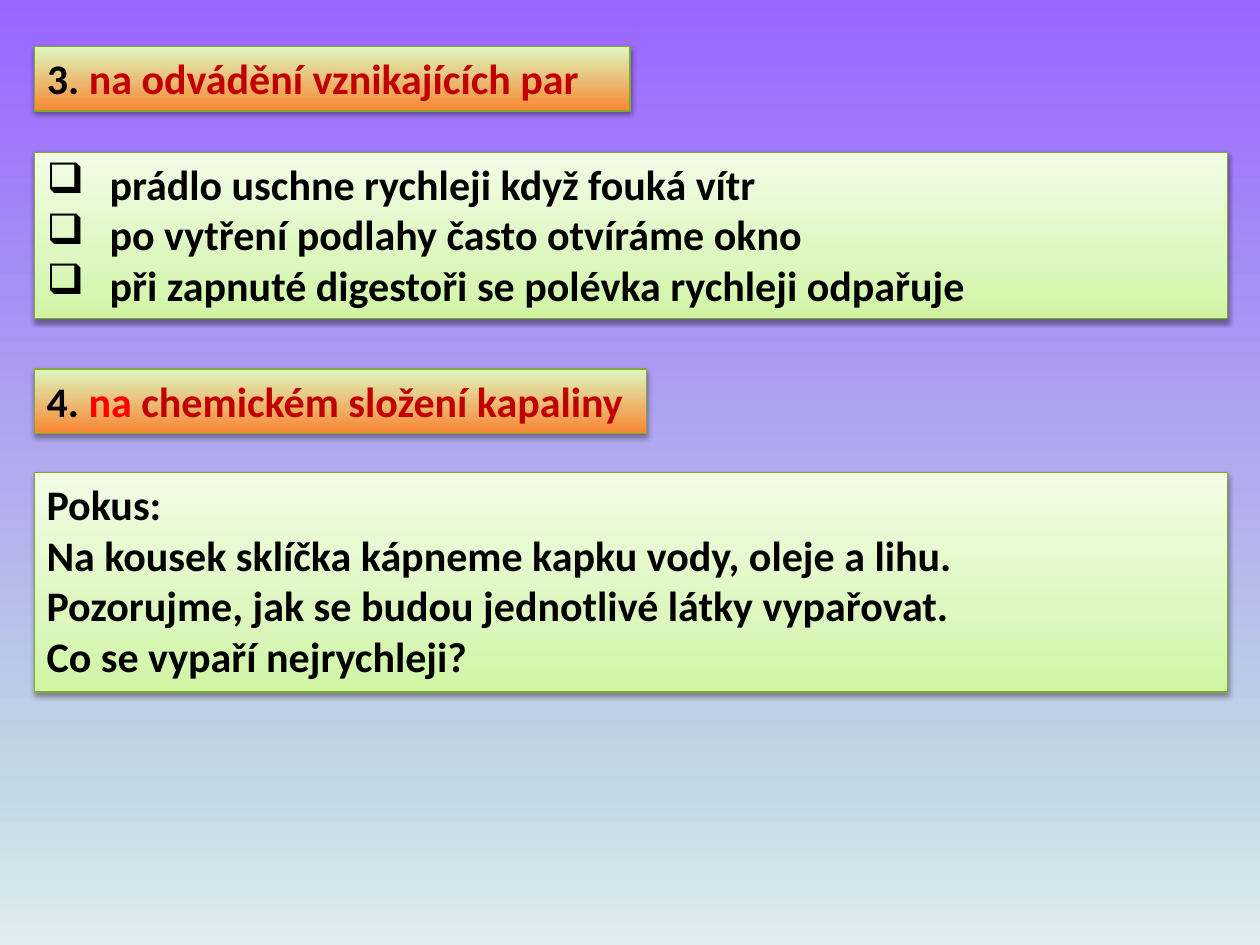
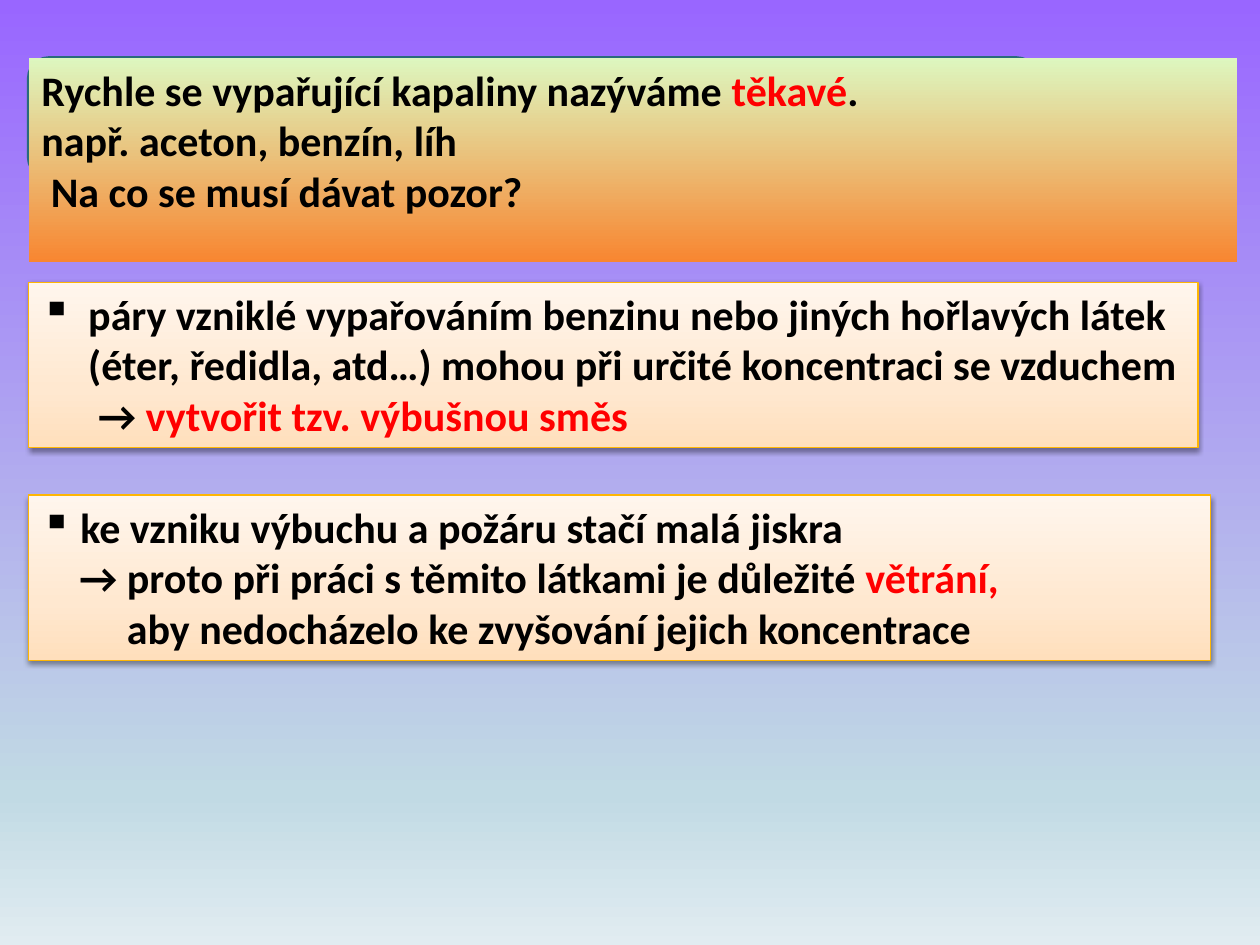
"""Build two slides about what the evaporation of liquids depends on."""
import dataclasses

import pptx
import pptx.dml.color
import pptx.enum.shapes
import pptx.enum.text
import pptx.oxml
import pptx.oxml.ns
import pptx.util
from lxml import etree

Cm, Pt = pptx.util.Cm, pptx.util.Pt
RGB = pptx.dml.color.RGBColor
SHAPE = pptx.enum.shapes.MSO_SHAPE
qn = pptx.oxml.ns.qn

HUES = {
    "black": "000000", "red": "FF0000", "dark": "C00000",
    "teal": "3891A7", "navy": "296B7C", "leaf": "82A92F", "gold": "FEB604",
}
SKY = ((0, "9966FF"), (84, "C1DAE4"), (100, "E1ECF1"))
GREEN = ((0, "D0F5A3"), (35, "DDF7BF"), (100, "F2FDE6"))
FLAME = ((0, "F88631"), (100, "DDF7BF"))
PEACH = ((0, "FFDFBC"), (35, "FFE8D0"), (100, "FFF6ED"))
UP, DOWN = 90, 270


@dataclasses.dataclass(frozen=True)
class Line:
    """One paragraph: runs of text and colour, left margin in cm, bullet."""
    runs: tuple
    left: float = 0
    mark: str = ""


@dataclasses.dataclass(frozen=True)
class Box:
    """A gradient panel; place is left, top, width and height in cm."""
    place: tuple
    stops: tuple
    edge: str
    lines: tuple
    title: bool = False


def plain(text: str, left: float = 0, mark: str = "") -> Line:
    """Return a black line."""
    return Line(((text, "black"),), left, mark)


def tint(name: str) -> RGB:
    """Return a named colour."""
    return RGB.from_string(HUES[name])


def node(root, tag: str, **attrs):
    """Append an XML element with attributes."""
    return etree.SubElement(root, qn(tag), {k: str(v) for k, v in attrs.items()})


def blend(fill, root, stops: tuple, angle: int) -> None:
    """Give a fill a linear gradient with any number of stops."""
    fill.gradient()
    fill.gradient_angle = angle
    group = next(root.iter(qn("a:gsLst")))
    for old in list(group):
        group.remove(old)
    for pos, hue in stops:
        node(node(group, "a:gs", pos=pos * 1000), "a:srgbClr", val=hue)


def shade(shape) -> None:
    """Add a soft shadow below a shape."""
    root = shape._element.spPr.find(qn("a:effectLst"))
    glow = node(root, "a:outerShdw", blurRad=Pt(3.1), dist=Pt(1.6),
                dir=5400000, algn="ctr", rotWithShape=0)
    node(node(glow, "a:srgbClr", val=HUES["black"]), "a:alpha", val=38000)


def write(frame, lines: tuple, *, size: int = 24, font: str = "Calibri",
          bold: bool = True) -> None:
    """Fill a text frame with formatted lines."""
    frame.word_wrap = True
    frame.auto_size = pptx.enum.text.MSO_AUTO_SIZE.NONE
    frame.vertical_anchor = pptx.enum.text.MSO_ANCHOR.TOP
    for i, line in enumerate(lines):
        para = frame.add_paragraph() if i else frame.paragraphs[0]
        para.alignment = pptx.enum.text.PP_ALIGN.LEFT
        props = para._p.get_or_add_pPr()
        props.set("marL", str(Cm(line.left)))
        props.set("indent", str(-Cm(line.left) if line.mark else 0))
        if line.mark:
            node(props, "a:buChar", char=line.mark)
        for text, hue in line.runs:
            run = para.add_run()
            run.text = text
            run.font.size, run.font.name, run.font.bold = Pt(size), font, bold
            run.font.color.rgb = tint(hue)


def draw(slide, box: Box) -> None:
    """Draw a panel, using the title placeholder for a title."""
    place = [Cm(x) for x in box.place]
    if box.title:
        shape = slide.shapes.title
        shape.left, shape.top, shape.width, shape.height = place
        slide.shapes._spTree.append(shape._element)
    else:
        shape = slide.shapes.add_shape(SHAPE.RECTANGLE, *place)
    blend(shape.fill, shape._element, box.stops, UP)
    shape.shadow.inherit = False
    if box.edge:
        shape.line.color.rgb = tint(box.edge)
        shape.line.width = Pt(0.75)
        shade(shape)
    else:
        shape.line.fill.background()
    write(shape.text_frame, box.lines)


def start(deck):
    """Add a title-only slide with the shared background."""
    slide = deck.slides.add_slide(deck.slide_layouts[5])
    blend(slide.background.fill, slide._element, SKY, DOWN)
    return slide


def plate(slide) -> None:
    """Draw the rounded plate behind the heading."""
    shape = slide.shapes.add_shape(SHAPE.ROUNDED_RECTANGLE, Cm(0.58), Cm(1.17),
                                   Cm(20.32), Cm(2.41))
    shape.shadow.inherit = False
    shape.fill.solid()
    shape.fill.fore_color.rgb = tint("teal")
    shape.line.color.rgb = tint("navy")
    shape.line.width = Pt(2)


FACTORS = (
    Box((0.69, 3.07, 24.05, 3.35), GREEN, "leaf", tuple(
        plain(text, 1.27, "❑") for text in (
            "prádlo uschne rychleji když fouká vítr",
            "po vytření podlahy často otvíráme okno",
            "při zapnuté digestoři se polévka rychleji odpařuje"))),
    Box((0.69, 0.94, 12.01, 1.3), FLAME, "leaf", (
        Line((("3. ", "black"), ("na odvádění vznikajících par", "dark"))),), True),
    Box((0.69, 9.53, 24.05, 4.42), GREEN, "leaf", tuple(
        plain(text) for text in (
            "Pokus:",
            "Na kousek sklíčka kápneme kapku vody, oleje a lihu.",
            "Pozorujme, jak se budou jednotlivé látky vypařovat.",
            "Co se vypaří nejrychleji?"))),
    Box((0.69, 7.44, 12.34, 1.3), FLAME, "leaf", (
        Line((("4. ", "black"), ("na ", "red"),
              ("chemickém složení kapaliny", "dark"))),)),
)
HAZARDS = (
    Box((0.58, 1.17, 24.36, 4.11), FLAME, "", (
        Line((("Rychle se vypařující kapaliny nazýváme ", "black"),
              ("těkavé", "red"), (".", "black"))),
        plain("např. aceton, benzín, líh"),
        plain("Na co se musí dávat pozor?", 0.19)), True),
    Box((0.58, 5.69, 23.57, 3.33), PEACH, "gold", (
        plain("páry vzniklé vypařováním benzinu nebo jiných hořlavých látek",
              0.95, "▪"),
        plain("(éter, ředidla, atd…) mohou při určité koncentraci se vzduchem", 0.95),
        Line((("→ ", "black"), ("vytvořit tzv. výbušnou směs", "red")), 1.15))),
    Box((0.58, 9.98, 23.83, 3.33), PEACH, "gold", (
        plain("ke vzniku výbuchu a požáru stačí malá jiskra", 0.79, "▪"),
        Line((("→ proto při práci s těmito látkami je důležité ", "black"),
              ("větrání,", "red")), 0.77),
        plain("aby nedocházelo ke zvyšování jejich koncentrace", 1.73))),
)


def main() -> None:
    """Build and save the deck."""
    deck = pptx.Presentation()
    deck.slide_width, deck.slide_height = Cm(25.4), Cm(19.05)
    first, second = start(deck), start(deck)
    plate(second)
    for slide, boxes in ((first, FACTORS), (second, HAZARDS)):
        for box in boxes:
            draw(slide, box)
    deck.save("out.pptx")


if __name__ == "__main__":
    main()
